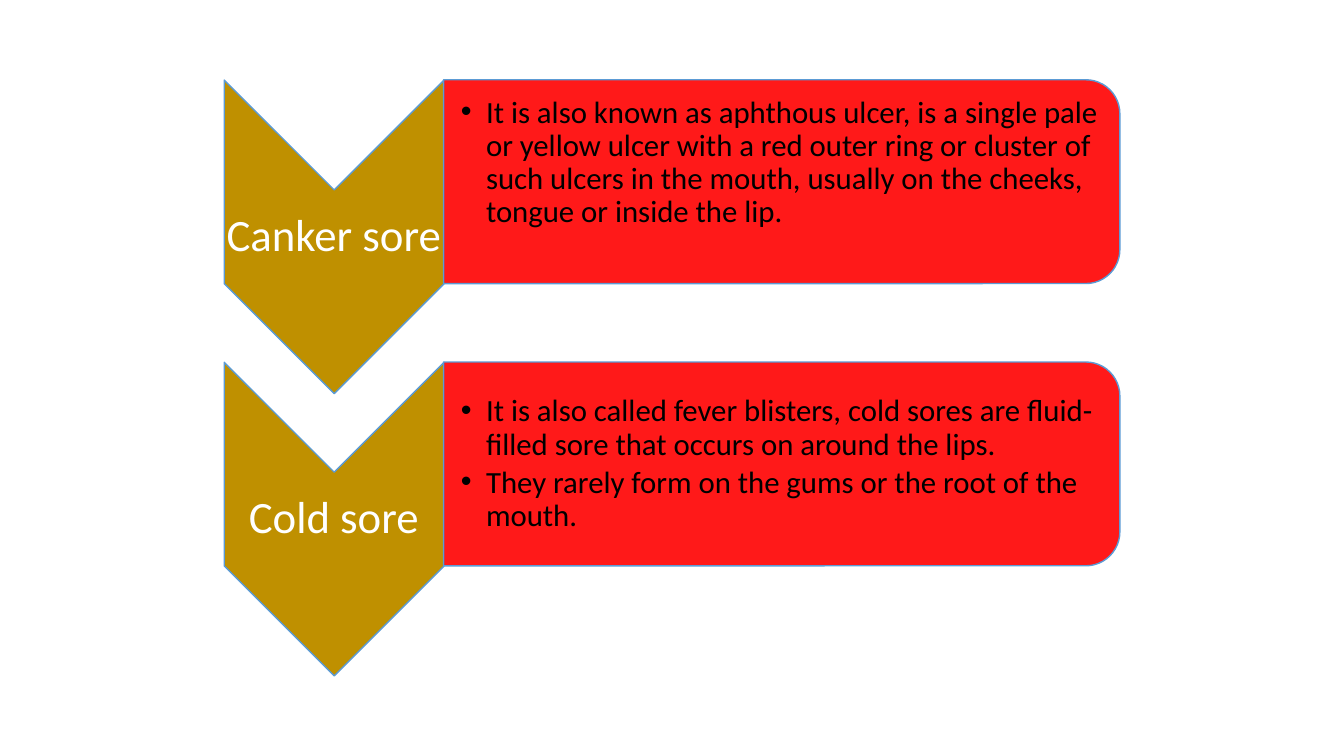
"""Build a slide comparing canker sores and cold sores."""
from lxml import etree
from pptx import Presentation
from pptx.dml.color import RGBColor
from pptx.enum.shapes import MSO_SHAPE
from pptx.enum.text import MSO_ANCHOR, PP_ALIGN
from pptx.oxml.ns import qn
from pptx.util import Pt

GOLD = RGBColor(0xBF, 0x90, 0x00)
RED = RGBColor(0xFF, 0x00, 0x00)
BLUE = RGBColor(0x5B, 0x9B, 0xD5)
WHITE = RGBColor(0xFF, 0xFF, 0xFF)
BLACK = RGBColor(0x00, 0x00, 0x00)
CHEVRON = MSO_SHAPE.CHEVRON
PANEL = MSO_SHAPE.ROUND_2_SAME_RECTANGLE
MIDDLE = MSO_ANCHOR.MIDDLE
CENTER = PP_ALIGN.CENTER
LEFT = PP_ALIGN.LEFT

ROW_STEP = 201.6
INSET = 1.44
SORES = [
    ("Canker sore", 28.6, [
        "It is also known as aphthous ulcer, is a single pale or yellow ulcer "
        "with a red outer ring or cluster of such ulcers in the mouth, usually "
        "on the cheeks, tongue or inside the lip."]),
    ("Cold sore", INSET, [
        "It is also called fever blisters, cold sores are fluid-filled sore "
        "that occurs on around the lips.",
        "They rarely form on the gums or the root of the mouth."]),
]


def add_turned_shape(page, kind, left, top, width, height, color):
    shape = page.shapes.add_shape(kind, Pt(left), Pt(top), Pt(width), Pt(height))
    shape.rotation = 90
    shape.shadow.inherit = False
    shape.fill.solid()
    shape.fill.fore_color.rgb = color
    shape.line.color.rgb = BLUE
    shape.line.width = Pt(1)
    return shape


def add_text(page, left, top, width, height, lines, size, color, align, gap, bulleted):
    box = page.shapes.add_textbox(Pt(left), Pt(top), Pt(width), Pt(height))
    frame = box.text_frame
    frame.word_wrap = True
    frame.vertical_anchor = MIDDLE
    frame.margin_left = frame.margin_right = Pt(INSET)
    frame.margin_top = frame.margin_bottom = Pt(INSET)
    frame.text = "\n".join(lines)
    for para in frame.paragraphs:
        para.alignment = align
        para.line_spacing = 0.9
        para.space_after = Pt(gap)
        if bulleted:
            properties = para._p.get_or_add_pPr()
            properties.set("marL", str(Pt(18)))
            properties.set("indent", str(Pt(-18)))
            etree.SubElement(properties, qn("a:buFont")).set("typeface", "Arial")
            etree.SubElement(properties, qn("a:buChar")).set("char", "•")
        for span in para.runs:
            span.font.name = "Calibri"
            span.font.size = Pt(size)
            span.font.color.rgb = color
    return frame


deck = Presentation()
deck.slide_width = Pt(960)
deck.slide_height = Pt(540)
page = deck.slides.add_slide(deck.slide_layouts[6])

for row, (name, bottom_inset, facts) in enumerate(SORES):
    offset = row * ROW_STEP
    add_turned_shape(page, CHEVRON, 126.7, 90.7 + offset, 224, 157, GOLD)
    add_text(page, 160, 135.6 + offset, 157, 67, [name], 32, WHITE, CENTER, 0, False)
    panel = add_turned_shape(page, PANEL, 485.6, -111.7 + offset, 145.6, 483, RED)
    panel_color = panel.fill._xPr.find(qn("a:solidFill"))[0]
    etree.SubElement(panel_color, qn("a:alpha")).set("val", "90000")
    frame = add_text(page, 316.9, 64.1 + offset, 476, 131.8, facts, 22, BLACK, LEFT, 3.3, True)
    frame.margin_left = Pt(12.3)
    frame.margin_bottom = Pt(bottom_inset)

deck.save("out.pptx")
